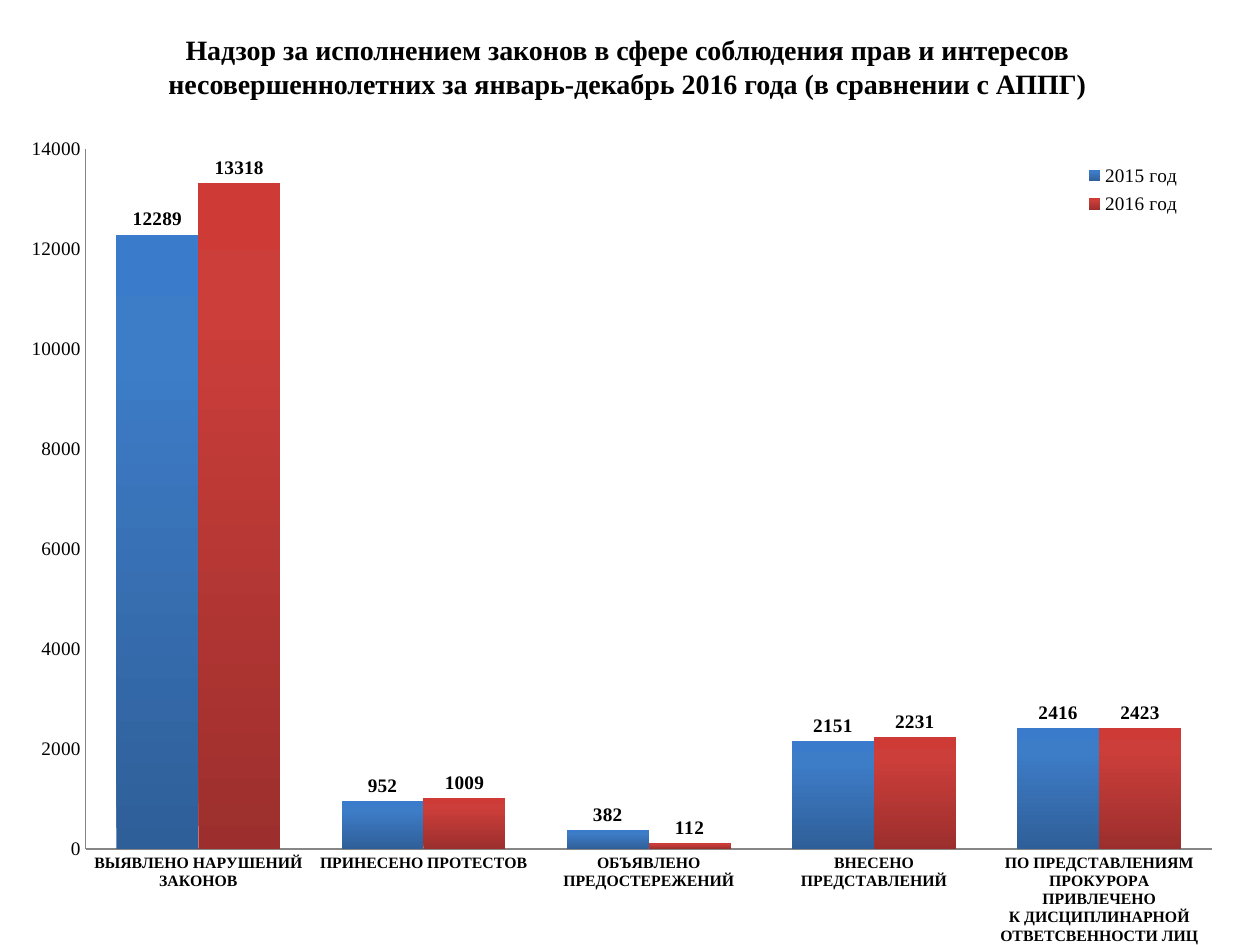
from copy import deepcopy
from dataclasses import dataclass

from lxml.etree import SubElement
from pptx import Presentation
from pptx.chart.data import CategoryChartData
from pptx.dml.color import RGBColor
from pptx.enum.chart import (XL_CHART_TYPE, XL_LABEL_POSITION,
                             XL_LEGEND_POSITION, XL_TICK_MARK)
from pptx.enum.text import MSO_ANCHOR, PP_ALIGN
from pptx.oxml.ns import qn
from pptx.util import Inches, Pt

WIDE, HIGH = 10, 7.5
FACE = "Times New Roman"
HEX = {
    "ink": "000000", "axis": "868686",
    "blue low": "2F5F99", "blue mid": "3D7CC7", "blue top": "3A7CCB",
    "red low": "9C2F2D", "red mid": "CB3E3A", "red top": "CE3B37",
}
STOPS = {"low": 0, "mid": 0.8, "top": 1}


@dataclass
class Year:
    name: str
    hue: str
    vals: tuple


YEARS = (
    Year("2015 год", "blue", (12289, 952, 382, 2151, 2416)),
    Year("2016 год", "red", (13318, 1009, 112, 2231, 2423)),
)
CATS = (
    "ВЫЯВЛЕНО НАРУШЕНИЙ ЗАКОНОВ",
    "ПРИНЕСЕНО ПРОТЕСТОВ",
    "ОБЪЯВЛЕНО ПРЕДОСТЕРЕЖЕНИЙ",
    "ВНЕСЕНО ПРЕДСТАВЛЕНИЙ",
    "ПО ПРЕДСТАВЛЕНИЯМ ПРОКУРОРА ПРИВЛЕЧЕНО\n"
    "К ДИСЦИПЛИНАРНОЙ ОТВЕТСВЕННОСТИ ЛИЦ",
)


def color(name: str) -> RGBColor:
    return RGBColor.from_string(HEX[name])


def style(font, size: float, bold: bool = False, face: str = FACE) -> None:
    font.size, font.bold, font.name = Pt(size), bold, face
    font.color.rgb = color("ink")


def write(slide, text: str, box: tuple, size: float, bold: bool = False,
          align=PP_ALIGN.CENTER) -> None:
    frame = slide.shapes.add_textbox(*map(Inches, box)).text_frame
    frame.word_wrap = True
    frame.vertical_anchor = MSO_ANCHOR.TOP
    par = frame.paragraphs[0]
    par.alignment = align
    run = par.add_run()
    run.text = text
    style(run.font, size, bold)


def place(part, shares: tuple, inner: bool = False) -> None:
    """Set a chart part's place as shares of the chart's size."""
    layout = part.find(qn("c:layout"))
    if layout is None:
        layout = SubElement(part, qn("c:layout"))
        # The layout comes first in a plot area, after the position in a legend
        part.insert(0 if inner else 1, layout)
    for child in list(layout):
        layout.remove(child)
    man = SubElement(layout, qn("c:manualLayout"))
    rows = [("layoutTarget", "inner")] if inner else []
    rows += [("xMode", "edge"), ("yMode", "edge")]
    rows += zip("xywh", shares)
    for tag, val in rows:
        SubElement(man, qn(f"c:{tag}")).set("val", str(val))


def shade(bar, hue: str) -> None:
    """Fill a series with its three-stop gradient, dark at the foot."""
    fill = bar.format.fill
    fill.gradient()
    fill.gradient_angle = 90
    stops = next(bar._element.iter(qn("a:gsLst")))
    stops.append(deepcopy(stops[0]))
    for stop, (tone, pos) in zip(fill.gradient_stops, STOPS.items()):
        stop.color.rgb = color(f"{hue} {tone}")
        stop.position = pos


def trim(axis, size: float, bold: bool = False) -> None:
    axis.has_major_gridlines = False
    axis.major_tick_mark = axis.minor_tick_mark = XL_TICK_MARK.NONE
    axis.format.line.color.rgb = color("axis")
    axis.format.line.width = Pt(0.75)
    style(axis.tick_labels.font, size, bold)


def draw(slide, box: tuple) -> None:
    data = CategoryChartData(number_format="General")
    data.categories = CATS
    for year in YEARS:
        data.add_series(year.name, year.vals)
    chart = slide.shapes.add_chart(
        XL_CHART_TYPE.COLUMN_CLUSTERED, *map(Inches, box), data).chart
    style(chart.font, 10, face="Calibri")
    chart.has_title = False

    # Axes
    trim(chart.category_axis, 9, bold=True)
    trim(chart.value_axis, 11)
    scale = chart.value_axis
    scale.minimum_scale, scale.maximum_scale, scale.major_unit = 0, 14000, 2000

    # Columns and their values
    plot = chart.plots[0]
    plot.gap_width, plot.overlap, plot.vary_by_categories = 75, 0, False
    for bar, year in zip(plot.series, YEARS):
        shade(bar, year.hue)
        bar.invert_if_negative = False
        tags = bar.data_labels
        tags.show_value = True
        tags.position = XL_LABEL_POSITION.OUTSIDE_END
        style(tags.font, 11, bold=True)

    # Legend and plot area
    chart.has_legend = True
    key = chart.legend
    key.position = XL_LEGEND_POSITION.BOTTOM
    key.include_in_layout = True
    style(key.font, 11)
    place(key._element, (0.87, 0.04, 0.09, 0.08))
    area = next(chart._chartSpace.iter(qn("c:plotArea")))
    place(area, (0.05, 0.03, 0.93, 0.86), inner=True)


def main() -> None:
    deck = Presentation()
    deck.slide_width, deck.slide_height = Inches(WIDE), Inches(HIGH)
    slide = deck.slides.add_slide(deck.slide_layouts[6])
    # Chart
    draw(slide, (0.02 * WIDE, 0.99, 0.961 * WIDE, 6.51))
    # Title
    write(slide, "Надзор за исполнением законов в сфере соблюдения прав и "
          "интересов несовершеннолетних за январь-декабрь 2016 года "
          "(в сравнении с АППГ)", (0.48, 0.21, 0.9 * WIDE, 0.61), 16, bold=True)
    deck.save("out.pptx")


if __name__ == "__main__":
    main()
